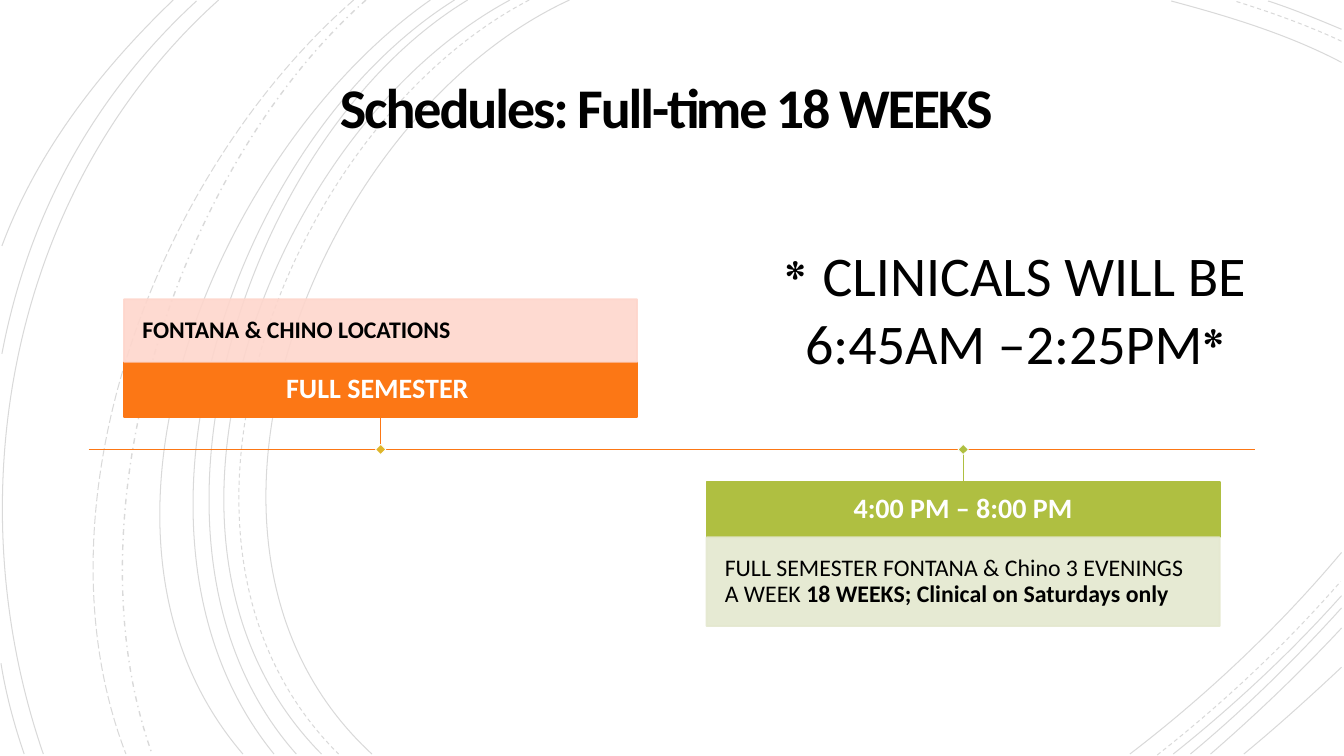
from dataclasses import dataclass

from lxml.etree import SubElement
from pptx import Presentation
from pptx.dml.color import RGBColor
from pptx.enum.dml import MSO_LINE
from pptx.enum.shapes import MSO_CONNECTOR, MSO_SHAPE
from pptx.enum.text import MSO_ANCHOR, MSO_AUTO_SIZE, PP_ALIGN
from pptx.oxml.ns import qn
from pptx.util import Pt


@dataclass(frozen=True)
class Theme:
    ink: str = "000000"
    paper: str = "FFFFFF"
    orange: str = "FC7715"
    peach: str = "FED6CC"
    green: str = "AFBF41"
    sage: str = "E4E8CF"
    gold: str = "DFB62A"
    sans: str = "Calibri"
    serif: str = "TeX Gyre Bonum"
    headline: int = 40
    star: int = 36
    label: int = 20
    detail: int = 17


THEME = Theme()

SOLID_ARCS = [
    [(406.8, 0), (226.8, 82.8), (103, 388.8), (265.7, 538.6)],
    [(958.3, 44.6), (920.2, 24.5), (877, 11.5), (836.6, 0.7)],
    [(807.1, 538.6), (861.8, 496.8), (913.7, 447.8), (958.3, 394.6)],
    [(364.3, 0), (194.4, 91.4), (79.2, 386.6), (229.7, 538.6)],
    [(958.3, 20.9), (941, 13.7), (923.8, 6.5), (905.8, 0.7)],
    [(838.1, 538.6), (880.6, 504.7), (921.6, 466.6), (958.3, 425.5)],
    [(334.1, 0), (175.7, 95.8), (79.2, 389.5), (211.7, 538.6)],
    [(850.3, 538.6), (888.5, 506.9), (924.5, 471.6), (958.3, 434.2)],
    [(324.7, 0), (166.3, 99.4), (69.8, 383.8), (195.8, 538.6)],
    [(864.7, 538.6), (897.1, 510.5), (928.8, 480.2), (958.3, 448.6)],
    [(307.4, 0), (156.2, 105.8), (38.2, 380.9), (173.5, 538.6)],
    [(888.5, 538.6), (912.2, 519.1), (935.3, 498.2), (958.3, 476.6)],
    [(156.2, 0), (7.9, 133.2), (-33.1, 352.8), (31, 538.6)],
    [(140.4, 0.7), (66.2, 69.1), (20.2, 154.1), (1.4, 252.7)],
    [(0.7, 473.8), (4.3, 496.1), (10.1, 517.7), (17.3, 538.6)],
    [(123.8, 0), (72, 49.7), (26.6, 108), (1.4, 175.7)],
]
DASHED_ARCS = [
    [(378, 0), (205.2, 90), (88.6, 386.6), (241.9, 538.6)],
    [(958.3, 29.5), (933.8, 18), (907.2, 8.6), (882, 0.7)],
    [(826.6, 539.3), (873.4, 502.6), (918, 460.8), (957.6, 415.4)],
]
DASH_DOT_ARCS = [[(261.4, 0), (126.7, 119.5), (46.8, 366.5), (108.7, 538.6)]]
LONG_DASH_ARCS = [[(252.7, 0), (113, 121.7), (20.9, 359.3), (90, 538.6)]]


def set_line(line, color, width):
    line.color.rgb = RGBColor.from_string(color)
    line.width = Pt(width)


def set_opacity(shape, percent):
    for color in shape._element.spPr.iter(qn("a:srgbClr")):
        SubElement(color, qn("a:alpha")).set("val", str(percent * 1000))


def add_arc(page, points, width, dash):
    start, *rest = [(Pt(x), Pt(y)) for x, y in points]
    builder = page.shapes.build_freeform(*start)
    builder.add_line_segments(rest, close=False)
    arc = builder.convert_to_shape()
    outline = next(arc._element.iter(qn("a:path")))
    curve = SubElement(outline, qn("a:cubicBezTo"))
    for segment in outline.findall(qn("a:lnTo")):
        curve.append(segment[0])
        outline.remove(segment)
    arc.fill.background()
    set_line(arc.line, THEME.ink, width)
    arc.line.dash_style = dash
    set_opacity(arc, 15)
    arc.shadow.inherit = False


def add_line(page, start, end, color, width):
    line = page.shapes.add_connector(
        MSO_CONNECTOR.STRAIGHT, *map(Pt, start + end))
    set_line(line.line, color, width)
    SubElement(line._element.spPr, qn("a:effectLst"))


def add_rectangle(page, area, fill, border, width):
    box = page.shapes.add_shape(MSO_SHAPE.RECTANGLE, *map(Pt, area))
    box.fill.solid()
    box.fill.fore_color.rgb = RGBColor.from_string(fill)
    set_line(box.line, border, width)
    box.shadow.inherit = False
    return box


def write(box, spans, align, spacing, inset, color=THEME.ink):
    frame = box.text_frame
    frame.word_wrap = True
    frame.vertical_anchor = MSO_ANCHOR.MIDDLE
    frame.margin_left = frame.margin_right = Pt(inset)
    frame.margin_top = frame.margin_bottom = Pt(inset)
    para = frame.paragraphs[0]
    para.alignment = align
    para.line_spacing = spacing
    for text, size, font, bold in spans:
        span = para.add_run()
        span.text = text
        span.font.size = Pt(size)
        span.font.name = font
        span.font.bold = bold
        span.font.color.rgb = RGBColor.from_string(color)


def add_title(page, text):
    box = page.shapes.add_textbox(Pt(138.2), Pt(13), Pt(683.3), Pt(132.5))
    write(box, [(text, THEME.headline, THEME.sans, True)],
          PP_ALIGN.CENTER, 0.85, 18)
    box.text_frame.margin_right = Pt(26)
    span = box.text_frame.paragraphs[0].runs[0]
    span._r.get_or_add_rPr().set("spc", "-150")


def add_label(page, left, top, text, color):
    box = add_rectangle(page, (left, top, 366.5, 39.6), color, color, 1.25)
    write(box, [(text, THEME.label, THEME.sans, True)],
          PP_ALIGN.CENTER, 0.9, 7.9, THEME.paper)


def add_detail(page, left, top, height, spans, color):
    box = add_rectangle(page, (left, top, 366.5, height), color, color, 1.25)
    set_opacity(box, 90)
    write(box, [(text, THEME.detail, THEME.sans, bold) for text, bold in spans],
          PP_ALIGN.LEFT, 0.9, 13)


def add_marker(page, x, y, color):
    side = 5.2
    area = (x - side / 2, y - side / 2, side, side)
    add_rectangle(page, area, color, THEME.paper, 0.5).rotation = 45


def add_note(page):
    box = page.shapes.add_textbox(Pt(537.1), Pt(168.5), Pt(375.8), Pt(104.4))
    write(box, [("* ", THEME.star, THEME.serif, False),
                ("CLINICALS WILL BE 6:45AM –2:25PM",
                 THEME.headline, THEME.sans, False),
                ("*", THEME.star, THEME.serif, False)],
          PP_ALIGN.CENTER, 1.0, 3.6)
    box.text_frame.margin_left = box.text_frame.margin_right = Pt(7.2)
    box.text_frame.vertical_anchor = MSO_ANCHOR.TOP
    box.text_frame.auto_size = MSO_AUTO_SIZE.SHAPE_TO_FIT_TEXT


def add_timeline(page):
    axis = 321.1
    left, right = 88.6, 504.7
    first, second = 271.9, 688
    add_line(page, (63.4, axis), (896.4, axis), THEME.orange, 1.25)
    add_label(page, left, 258.5, "FULL SEMESTER ", THEME.orange)
    add_detail(page, left, 213.8, 44.7,
               [("FONTANA & CHINO LOCATIONS", True)], THEME.peach)
    add_line(page, (first, 298.1), (first, axis), THEME.orange, 0.75)
    add_label(page, right, 344.2, "4:00 PM – 8:00 PM", THEME.green)
    add_detail(page, right, 383.8, 63.4,
               [("FULL SEMESTER FONTANA & Chino 3 EVENINGS A WEEK ", False),
                ("18 WEEKS; Clinical on Saturdays only", True)], THEME.sage)
    add_line(page, (second, axis), (second, 344.2), THEME.green, 0.75)
    add_marker(page, first, axis, THEME.gold)
    add_marker(page, second, axis, THEME.green)


def main():
    deck = Presentation()
    deck.slide_width, deck.slide_height = Pt(960), Pt(540)
    page = deck.slides.add_slide(deck.slide_layouts[6])
    for arcs, width, dash in [
        (SOLID_ARCS, 0.75, MSO_LINE.SOLID),
        (DASHED_ARCS, 0.75, MSO_LINE.DASH),
        (DASH_DOT_ARCS, 1, MSO_LINE.DASH_DOT),
        (LONG_DASH_ARCS, 0.75, MSO_LINE.LONG_DASH),
    ]:
        for points in arcs:
            add_arc(page, points, width, dash)
    add_title(page, "Schedules: Full-time 18 WEEKS")
    add_timeline(page)
    add_note(page)
    deck.save("out.pptx")


if __name__ == "__main__":
    main()
